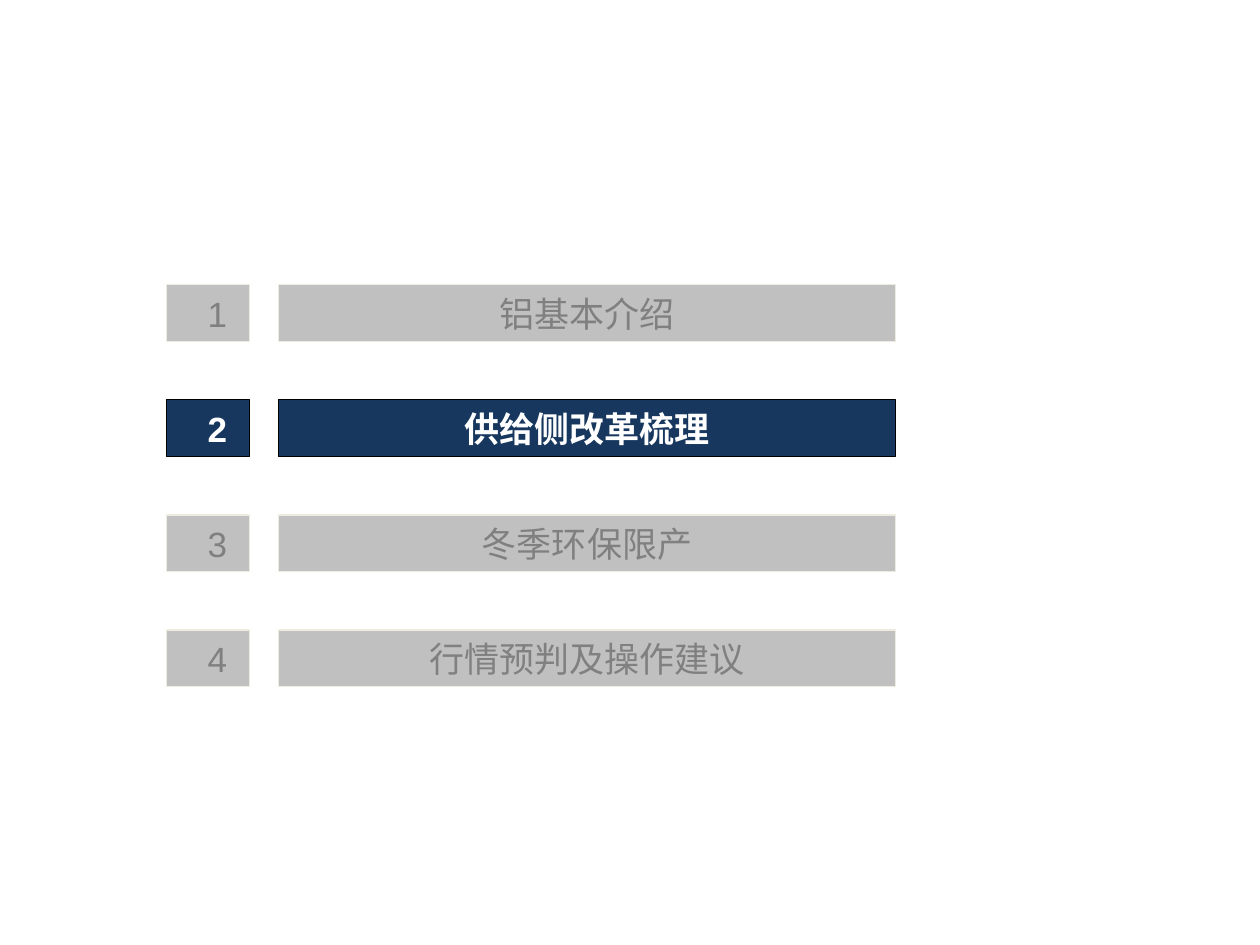
import pptx
import pptx.dml.color
import pptx.enum.shapes
import pptx.enum.text
import pptx.util

Inches = pptx.util.Inches
RGBColor = pptx.dml.color.RGBColor

GREY = RGBColor(0xC0, 0xC0, 0xC0)
DARK_GREY = RGBColor(0x80, 0x80, 0x80)
CREAM = RGBColor(0xEE, 0xEC, 0xE1)
NAVY = RGBColor(0x17, 0x37, 0x5E)
BLACK = RGBColor(0x00, 0x00, 0x00)
WHITE = RGBColor(0xFF, 0xFF, 0xFF)

NORMAL = {"fill": GREY, "line": CREAM, "text": DARK_GREY, "bold": False}
CURRENT = {"fill": NAVY, "line": BLACK, "text": WHITE, "bold": True}
TOPICS = ["铝基本介绍", "供给侧改革梳理", "冬季环保限产", "行情预判及操作建议"]
CURRENT_NUMBER = 2


def add_bar(s, text, left, top, width, height, style, indent=0.1):
    """Add one filled bar with centred text, shifted by its left inset."""
    sp = s.shapes.add_shape(
        pptx.enum.shapes.MSO_SHAPE.RECTANGLE,
        Inches(left), Inches(top), Inches(width), Inches(height))
    sp.shadow.inherit = False
    sp.fill.solid()
    sp.fill.fore_color.rgb = style["fill"]
    sp.line.color.rgb = style["line"]
    sp.line.width = pptx.util.Pt(0.75)
    tf = sp.text_frame
    frame = {"margin_left": Inches(indent), "word_wrap": True,
             "vertical_anchor": pptx.enum.text.MSO_ANCHOR.MIDDLE}
    for name, value in frame.items():
        setattr(tf, name, value)
    p = tf.paragraphs[0]
    p.alignment = pptx.enum.text.PP_ALIGN.CENTER
    r = p.add_run()
    r.text = text
    font = {"name": "Arial", "size": pptx.util.Pt(20), "bold": style["bold"]}
    for name, value in font.items():
        setattr(r.font, name, value)
    r.font.color.rgb = style["text"]


def add_agenda(s, left, top, width, height):
    """Place the numbered topics evenly in the given box, in inches."""
    bar_height, number_width, gap = 0.45, 0.66, 0.23
    pitch = (height - bar_height) / (len(TOPICS) - 1)
    offset = number_width + gap
    for i, topic in enumerate(TOPICS):
        style = CURRENT if i + 1 == CURRENT_NUMBER else NORMAL
        y = top + i * pitch
        add_bar(s, str(i + 1), left, y, number_width, bar_height, style, 0.25)
        add_bar(s, topic, left + offset, y, width - offset, bar_height, style)


def main():
    """Build the agenda slide and save it."""
    prs = pptx.Presentation()
    prs.slide_width, prs.slide_height = Inches(10), Inches(7.5)
    s = prs.slides.add_slide(prs.slide_layouts[6])
    add_agenda(s, 1.32, 2.26, 5.79, 3.19)
    prs.save("out.pptx")


if __name__ == "__main__":
    main()
